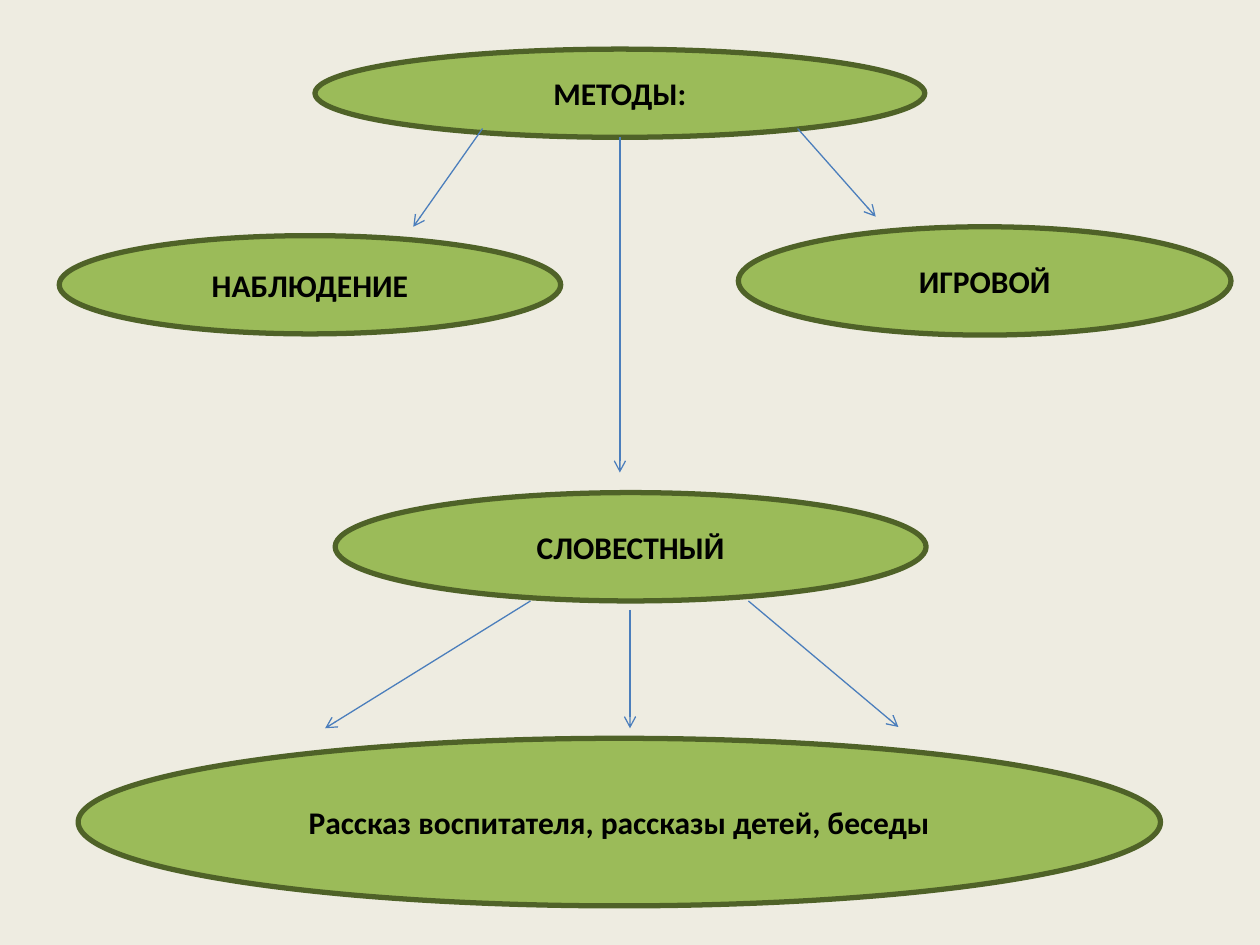
from pptx import Presentation
from pptx.dml.color import RGBColor
from pptx.enum.shapes import MSO_CONNECTOR, MSO_SHAPE
from pptx.enum.text import MSO_ANCHOR, PP_ALIGN
from pptx.oxml.ns import qn
from pptx.util import Inches, Pt
from lxml import etree

OVAL = MSO_SHAPE.OVAL
STRAIGHT = MSO_CONNECTOR.STRAIGHT
MIDDLE = MSO_ANCHOR.MIDDLE
CENTER = PP_ALIGN.CENTER

BACKGROUND = "EEECE1"
GREEN = "9BBB59"
DARK_GREEN = "4F6228"
BLUE = "4B7EBC"
BLACK = "000000"

# Text, left, top, width, height
METHODS = [
    ("МЕТОДЫ:", 2.5, 0.39, 4.84, 0.7),
    ("СЛОВЕСТНЫЙ", 2.66, 3.91, 4.69, 0.86),
    ("Рассказ воспитателя, рассказы детей, беседы", 0.62, 5.86, 8.59, 1.33),
    ("НАБЛЮДЕНИЕ", 0.47, 1.87, 3.98, 0.78),
    ("ИГРОВОЙ", 5.86, 1.8, 3.91, 0.86),
]

# Start x, start y, end x, end y
ARROWS = [
    (3.83, 1.02, 3.28, 1.8),
    (6.33, 1.02, 6.95, 1.72),
    (4.92, 1.09, 4.92, 3.75),
    (5, 4.84, 5, 5.78),
    (4.21, 4.77, 2.58, 5.78),
    (5.94, 4.77, 7.13, 5.77),
]


def color(value):
    return RGBColor.from_string(value)


def set_background(s, value):
    fill = s.background.fill
    fill.solid()
    fill.fore_color.rgb = color(value)


def add_ellipse(s, text, *box):
    sp = s.shapes.add_shape(OVAL, *map(Inches, box))
    sp.shadow.inherit = False
    sp.fill.solid()
    sp.fill.fore_color.rgb = color(GREEN)
    sp.line.color.rgb = color(DARK_GREEN)
    sp.line.width = Pt(3)
    tf = sp.text_frame
    tf.word_wrap = True
    tf.vertical_anchor = MIDDLE
    p = tf.paragraphs[0]
    p.alignment = CENTER
    r = p.add_run()
    r.text = text
    r.font.name = "Calibri"
    r.font.size = Pt(18)
    r.font.bold = True
    r.font.color.rgb = color(BLACK)


def add_arrow(s, *ends):
    cn = s.shapes.add_connector(STRAIGHT, *map(Inches, ends))
    cn.line.color.rgb = color(BLUE)
    cn.line.width = Pt(0.75)
    # Open arrowhead at the end, no shadow
    etree.SubElement(cn.line._get_or_add_ln(), qn("a:tailEnd"), type="arrow")
    etree.SubElement(cn._element.spPr, qn("a:effectLst"))


def main():
    prs = Presentation()
    prs.slide_width, prs.slide_height = Inches(10), Inches(7.5)
    s = prs.slides.add_slide(prs.slide_layouts[6])
    set_background(s, BACKGROUND)

    # Methods
    for method in METHODS:
        add_ellipse(s, *method)

    # Arrows between the levels
    for ends in ARROWS:
        add_arrow(s, *ends)

    prs.save("out.pptx")


if __name__ == "__main__":
    main()
